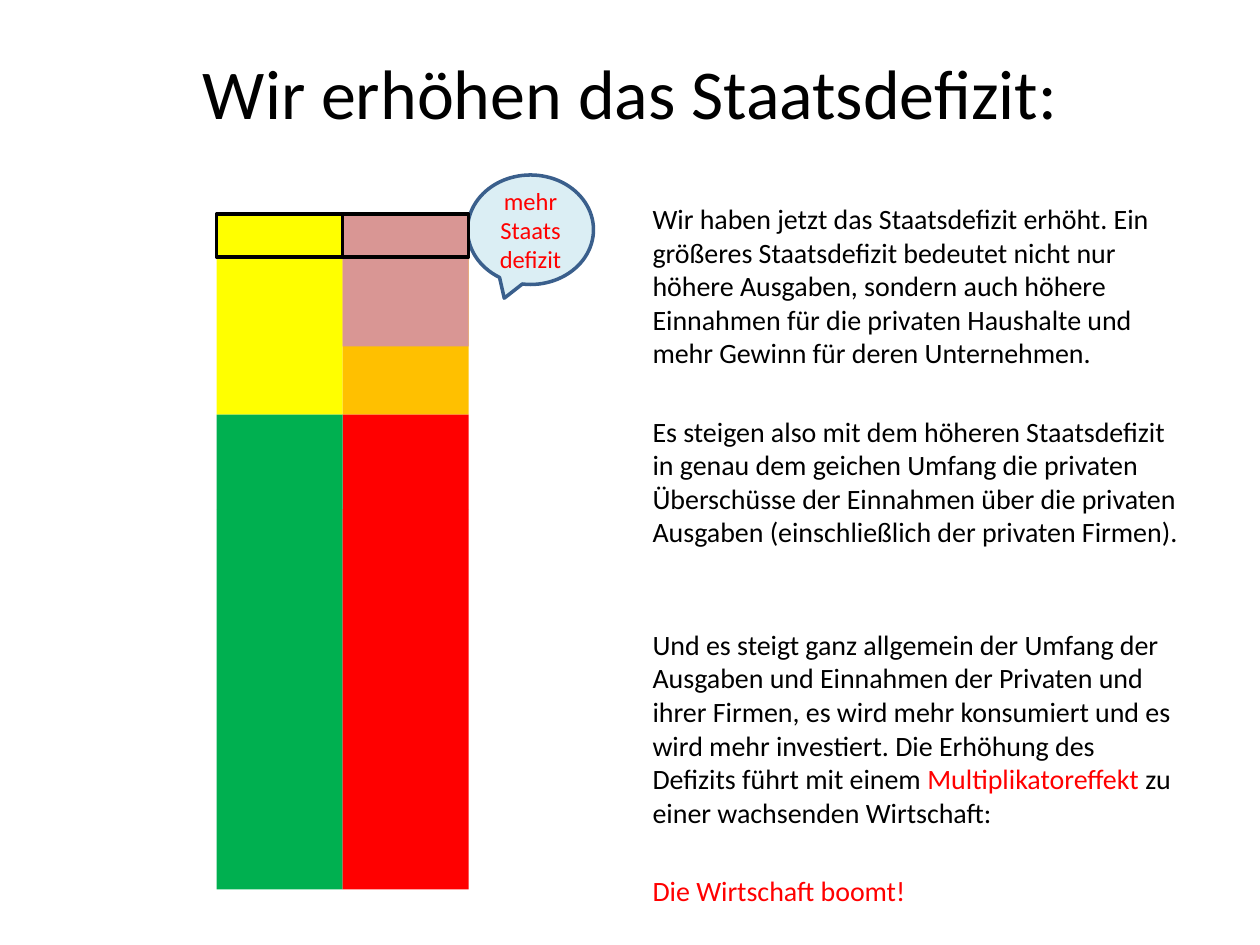
from dataclasses import dataclass

from pptx import Presentation
from pptx.dml.color import RGBColor
from pptx.enum.shapes import MSO_SHAPE
from pptx.enum.text import MSO_ANCHOR, PP_ALIGN
from pptx.util import Pt

RECTANGLE = MSO_SHAPE.RECTANGLE
CALLOUT = MSO_SHAPE.OVAL_CALLOUT
TOP, MIDDLE = MSO_ANCHOR.TOP, MSO_ANCHOR.MIDDLE
LEFT, CENTER = PP_ALIGN.LEFT, PP_ALIGN.CENTER


@dataclass(frozen=True)
class Theme:
    font: str = "Calibri"
    title_size: float = 40
    body_size: float = 16
    callout_size: float = 14
    outline: float = 2
    black: str = "000000"
    red: str = "FF0000"
    green: str = "00B050"
    yellow: str = "FFFF00"
    orange: str = "FFC000"
    pink: str = "D99694"
    pale_blue: str = "DBEEF4"
    dark_blue: str = "3A5F8C"


class SlideBuilder:
    def __init__(self, slide, theme):
        self.slide = slide
        self.theme = theme

    def fill_frame(self, frame, paragraphs, size, align, anchor):
        """Fill a frame from (space before, [(text, colour), ...]) pairs."""
        frame.word_wrap = True
        frame.vertical_anchor = anchor
        for index, (space, spans) in enumerate(paragraphs):
            para = frame.add_paragraph() if index else frame.paragraphs[0]
            para.alignment = align
            para.space_before = Pt(space)
            for text, color in spans:
                span = para.add_run()
                span.text = text
                span.font.name = self.theme.font
                span.font.size = Pt(size)
                span.font.color.rgb = RGBColor.from_string(color)

    def text(self, bounds, paragraphs, size, align=LEFT, anchor=TOP):
        box = self.slide.shapes.add_textbox(*map(Pt, bounds))
        self.fill_frame(box.text_frame, paragraphs, size, align, anchor)

    def shape(self, kind, bounds, fill, line=None):
        shape = self.slide.shapes.add_shape(kind, *map(Pt, bounds))
        shape.shadow.inherit = False
        shape.fill.solid()
        shape.fill.fore_color.rgb = RGBColor.from_string(fill)
        if line:
            shape.line.color.rgb = RGBColor.from_string(line)
            shape.line.width = Pt(self.theme.outline)
        else:
            shape.line.fill.background()
        return shape

    def segment(self, left, top, bottom, fill, line=None):
        """Draw one part of a stacked column."""
        self.shape(RECTANGLE, (left, top, COLUMN_WIDTH, bottom - top), fill, line)

    def callout(self, bounds, text):
        theme = self.theme
        shape = self.shape(CALLOUT, bounds, theme.pale_blue, theme.dark_blue)
        self.fill_frame(shape.text_frame, [(0, [(text, theme.red)])],
                        theme.callout_size, CENTER, MIDDLE)


COLUMN_WIDTH = 72
INCOME = 123.8
SPENDING = INCOME + COLUMN_WIDTH
# Heights at which the column segments meet, from top to bottom
DEFICIT_TOP, OLD_TOP, PINK_END, MIDDLE_TOP, BASE_TOP, BASE_END = (
    122.4, 146.9, 198, 236.9, 290.9, 508.3)
SECTION_GAP, WIDE_GAP = 25.6, 45


def main():
    deck = Presentation()
    deck.slide_width, deck.slide_height = Pt(720), Pt(540)
    theme = Theme()
    page = SlideBuilder(deck.slides.add_slide(deck.slide_layouts[6]), theme)

    page.text((36, 21.6, 648, 61.2),
              [(0, [("Wir erhöhen das Staatsdefizit:", theme.black)])],
              theme.title_size, CENTER, MIDDLE)

    page.text((365.8, 111.6, 318.2, 396.7), [
        (0, [("Wir haben jetzt das Staatsdefizit erhöht. Ein größeres "
              "Staatsdefizit bedeutet nicht nur höhere Ausgaben, sondern auch "
              "höhere Einnahmen für die privaten Haushalte und mehr Gewinn für "
              "deren Unternehmen.", theme.black)]),
        (SECTION_GAP, [("Es steigen also mit dem höheren Staatsdefizit in genau "
                        "dem geichen Umfang die privaten Überschüsse der "
                        "Einnahmen über die privaten Ausgaben (einschließlich "
                        "der privaten Firmen).", theme.black)]),
        (WIDE_GAP, [("Und es steigt ganz allgemein der Umfang der Ausgaben und "
                     "Einnahmen der Privaten und ihrer Firmen, es wird mehr "
                     "konsumiert und es wird mehr investiert. Die Erhöhung des "
                     "Defizits führt mit einem ", theme.black),
                    ("Multiplikatoreffekt", theme.red),
                    (" zu einer wachsenden Wirtschaft:", theme.black)]),
        (SECTION_GAP, [("Die Wirtschaft boomt!", theme.red)]),
    ], theme.body_size)

    page.segment(INCOME, BASE_TOP, BASE_END, theme.green)
    page.segment(INCOME, OLD_TOP, MIDDLE_TOP, theme.yellow)
    page.segment(SPENDING, OLD_TOP, MIDDLE_TOP, theme.orange)
    page.segment(SPENDING, BASE_TOP, BASE_END, theme.red)
    page.segment(SPENDING, OLD_TOP, PINK_END, theme.pink)
    page.callout((267.2, 100, 72, 62.6), "mehr Staatsdefizit")
    page.segment(SPENDING, DEFICIT_TOP, OLD_TOP, theme.pink, theme.black)
    page.segment(INCOME, DEFICIT_TOP, OLD_TOP, theme.yellow, theme.black)
    page.segment(SPENDING, MIDDLE_TOP, BASE_TOP, theme.red)
    page.segment(INCOME, MIDDLE_TOP, BASE_TOP, theme.green)

    deck.save("out.pptx")


if __name__ == "__main__":
    main()
